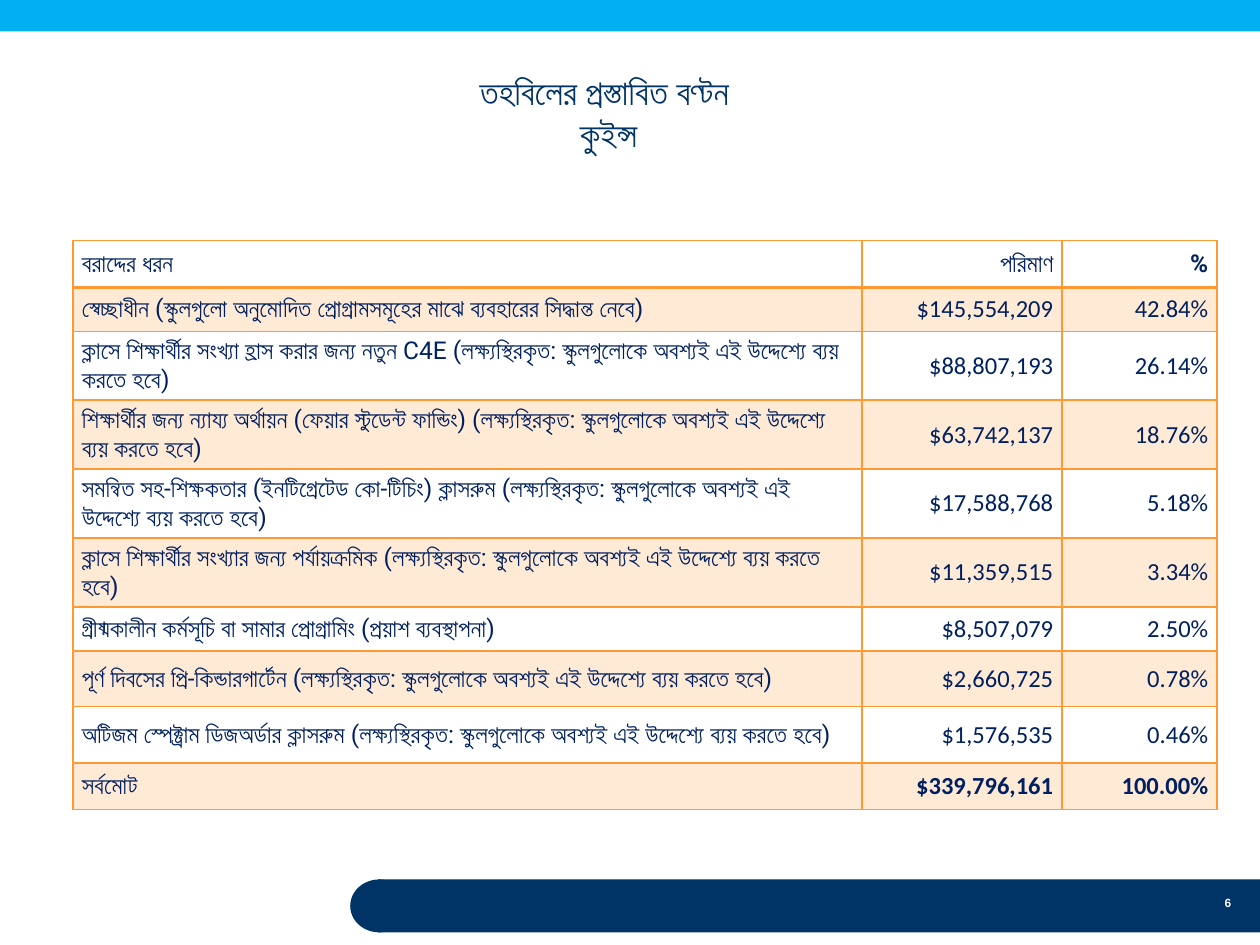
from typing import NamedTuple

from lxml import etree
from pptx import Presentation
from pptx import util as u
from pptx.dml.color import RGBColor
from pptx.enum import shapes, text
from pptx.oxml.ns import qn

WIDTH, HEIGHT = 10, 7.5
NAVY, SKY, INK, ORANGE, WHITE = "003366", "00B0F0", "002060", "FF9933", "FFFFFF"
TARGETED = "(লক্ষ্যস্থিরকৃত: স্কুলগুলোকে অবশ্যই এই উদ্দেশ্যে ব্যয় করতে হবে)"
COLUMN_WIDTHS = (6.26, 1.59, 1.23)


class Frame(NamedTuple):
    left: float
    top: float
    width: float
    height: float

    def lengths(self) -> list[int]:
        return [u.Inches(value) for value in self]


class Decoration(NamedTuple):
    kind: shapes.MSO_SHAPE
    frame: Frame
    color: str


class Allocation(NamedTuple):
    label: str
    amount: str
    share: str
    height: float


FOOTER_TOP, FOOTER_HEIGHT = 6.98, 0.42
DECORATIONS = [
    Decoration(shapes.MSO_SHAPE.RECTANGLE,
               Frame(0.3 * WIDTH, FOOTER_TOP, 0.7 * WIDTH, FOOTER_HEIGHT), NAVY),
    Decoration(shapes.MSO_SHAPE.OVAL, Frame(2.78, FOOTER_TOP, 0.46, FOOTER_HEIGHT), NAVY),
    Decoration(shapes.MSO_SHAPE.RECTANGLE, Frame(0, 0, WIDTH, HEIGHT / 30), SKY),
]
ALLOCATIONS = [
    Allocation("বরাদ্দের ধরন", "পরিমাণ", "%", 0.37),
    Allocation("স্বেচ্ছাধীন (স্কুলগুলো অনুমোদিত প্রোগ্রামসমূহের মাঝে ব্যবহারের সিদ্ধান্ত নেবে)",
               "$145,554,209", "42.84%", 0.35),
    Allocation(f"ক্লাসে শিক্ষার্থীর সংখ্যা হ্রাস করার জন্য নতুন C4E {TARGETED}",
               "$88,807,193", "26.14%", 0.45),
    Allocation(f"শিক্ষার্থীর জন্য ন্যায্য অর্থায়ন (ফেয়ার স্টুডেন্ট ফান্ডিং) {TARGETED}",
               "$63,742,137", "18.76%", 0.44),
    Allocation(f"সমন্বিত সহ-শিক্ষকতার (ইনটিগ্রেটেড কো-টিচিং) ক্লাসরুম {TARGETED}",
               "$17,588,768", "5.18%", 0.45),
    Allocation(f"ক্লাসে শিক্ষার্থীর সংখ্যার জন্য পর্যায়ক্রমিক {TARGETED}",
               "$11,359,515", "3.34%", 0.44),
    Allocation("গ্রীষ্মকালীন কর্মসূচি বা সামার প্রোগ্রামিং (প্রয়াশ ব্যবস্থাপনা)",
               "$8,507,079", "2.50%", 0.35),
    Allocation(f"পূর্ণ দিবসের প্রি-কিন্ডারগার্টেন {TARGETED}", "$2,660,725", "0.78%", 0.44),
    Allocation(f"অটিজম স্পেক্ট্রাম ডিজঅর্ডার ক্লাসরুম {TARGETED}", "$1,576,535", "0.46%", 0.45),
    Allocation("সর্বমোট", "$339,796,161", "100.00%", 0.37),
]


def rgb(color: str) -> RGBColor:
    return RGBColor.from_string(color)


def format_text(frame, font: str, size: float, color: str, bold: bool, align) -> None:
    for para in frame.paragraphs:
        para.alignment = align
        for span in para.runs:
            span.font.name = font
            span.font.size = u.Pt(size)
            span.font.bold = bold
            span.font.color.rgb = rgb(color)
            # Bengali letters take the complex-script font.
            etree.SubElement(span.font._element, qn("a:cs")).set("typeface", font)


def draw_decoration(page, item: Decoration) -> None:
    shape = page.shapes.add_shape(item.kind, *item.frame.lengths())
    shape.shadow.inherit = False
    shape.fill.solid()
    shape.fill.fore_color.rgb = rgb(item.color)
    shape.line.fill.background()


def set_borders(cell, bottom: float) -> None:
    properties = cell._tc.get_or_add_tcPr()
    for index, (side, width) in enumerate(zip("LRTB", (1, 1, 1, bottom))):
        line = etree.Element(qn(f"a:ln{side}"), w=str(u.Pt(width)))
        fill = etree.SubElement(line, qn("a:solidFill"))
        etree.SubElement(fill, qn("a:srgbClr"), val=ORANGE)
        properties.insert(index, line)


def fill_cell(cell, banded: bool) -> None:
    if not banded:
        cell.fill.background()
        return
    cell.fill.solid()
    cell.fill.fore_color.rgb = rgb(ORANGE)
    color = cell._tc.tcPr.find(f"{qn('a:solidFill')}/{qn('a:srgbClr')}")
    etree.SubElement(color, qn("a:alpha"), val="20000")


def draw_table(page, left: float, top: float, rows: list[Allocation]) -> None:
    frame = Frame(left, top, sum(COLUMN_WIDTHS), sum(row.height for row in rows))
    table = page.shapes.add_table(len(rows), len(COLUMN_WIDTHS), *frame.lengths()).table
    table.first_row = table.horz_banding = False
    for column, width in zip(table.columns, COLUMN_WIDTHS):
        column.width = u.Inches(width)
    last = len(rows) - 1
    for r, row in enumerate(rows):
        table.rows[r].height = u.Inches(row.height)
        for c, value in enumerate((row.label, row.amount, row.share)):
            cell = table.cell(r, c)
            cell.text_frame.text = value
            cell.vertical_anchor = text.MSO_ANCHOR.MIDDLE
            cell.margin_left = cell.margin_right = u.Inches(0.07)
            cell.margin_top = cell.margin_bottom = u.Inches(0.04)
            format_text(cell.text_frame, "Calibri" if r and c else "Roboto", 14, INK,
                        r in (0, last), text.PP_ALIGN.RIGHT if c else text.PP_ALIGN.LEFT)
            fill_cell(cell, banded=r % 2 == 1)
            set_borders(cell, bottom=1 if r else 2)


def set_title(page, wording: str, frame: Frame) -> None:
    title = page.shapes.title
    title.left, title.top, title.width, title.height = frame.lengths()
    title.text_frame.text = wording
    title.text_frame.auto_size = text.MSO_AUTO_SIZE.NONE
    title.text_frame.vertical_anchor = text.MSO_ANCHOR.BOTTOM
    format_text(title.text_frame, "Roboto", 20, NAVY, True, text.PP_ALIGN.CENTER)


def draw_page_number(page, number: str, frame: Frame) -> None:
    box = page.shapes.add_textbox(*frame.lengths())
    box.text_frame.word_wrap = True
    box.text_frame.text = number
    format_text(box.text_frame, "Arial", 6.8, WHITE, True, text.PP_ALIGN.RIGHT)


def main() -> None:
    deck = Presentation()
    deck.slide_width, deck.slide_height = u.Inches(WIDTH), u.Inches(HEIGHT)
    page = deck.slides.add_slide(deck.slide_layouts[5])
    for item in DECORATIONS:
        draw_decoration(page, item)
    draw_page_number(page, "6", Frame(8.79, 7.06, 1.08, 0.25))
    set_title(page, "তহবিলের প্রস্তাবিত বণ্টন \vকুইন্স", Frame(1.64, 0.55, 6.38, 0.73))
    draw_table(page, 0.58, 1.91, ALLOCATIONS)
    deck.save("out.pptx")


if __name__ == "__main__":
    main()
